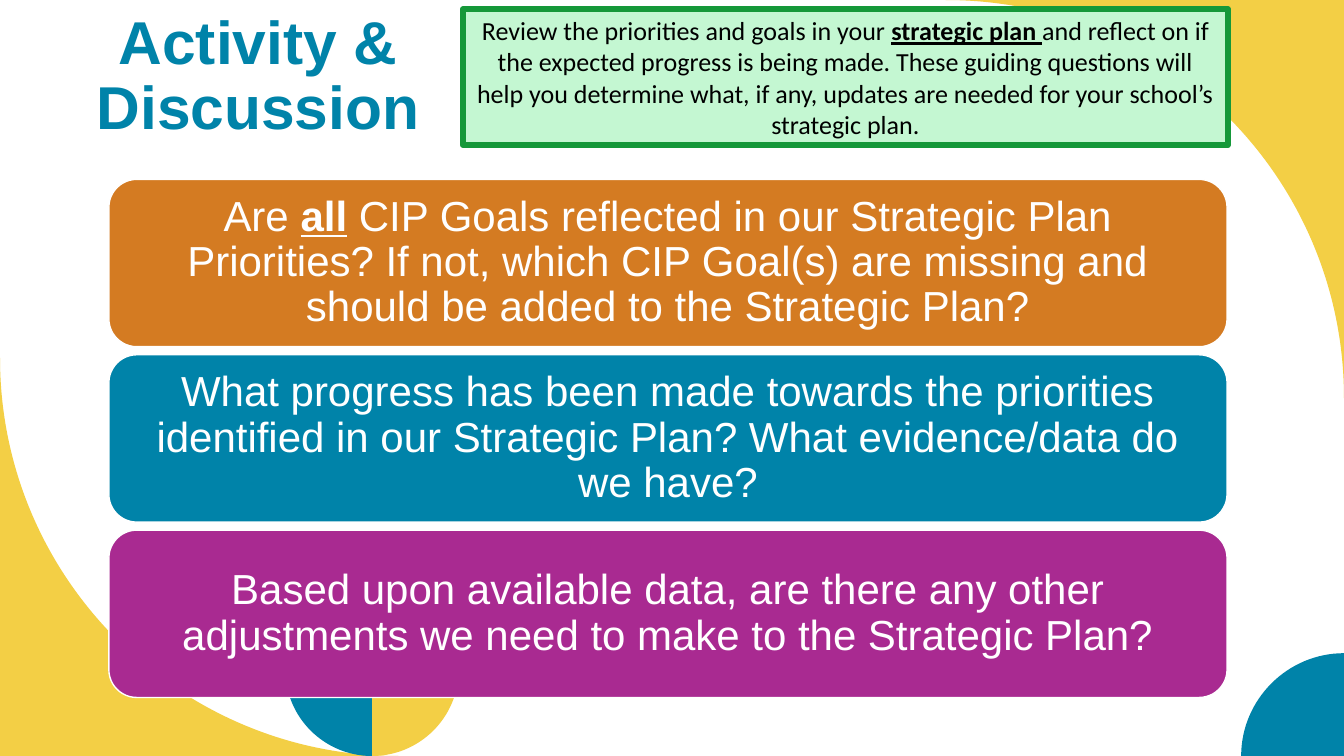
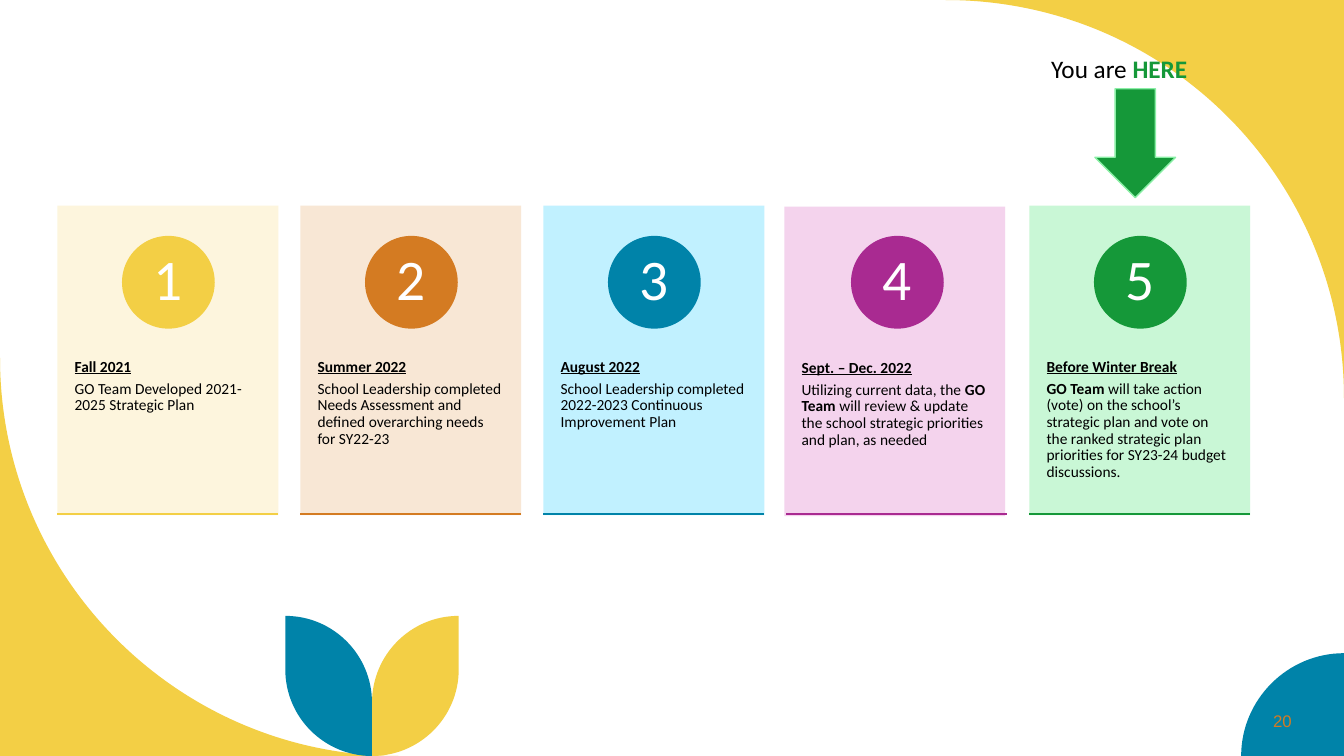
from lxml.etree import SubElement
from pptx import Presentation
from pptx.dml.color import RGBColor
from pptx.enum.shapes import MSO_CONNECTOR, MSO_SHAPE
from pptx.enum.text import MSO_ANCHOR, PP_ALIGN
from pptx.oxml.ns import qn
from pptx.util import Inches, Pt

YELLOW = RGBColor(0xF3, 0xCF, 0x45)
BLUE = RGBColor(0x00, 0x83, 0xA9)
ORANGE = RGBColor(0xD4, 0x7B, 0x22)
PURPLE = RGBColor(0xA9, 0x2A, 0x91)
GREEN = RGBColor(0x15, 0x98, 0x39)
CREAM = RGBColor(0xFD, 0xF5, 0xDA)
PEACH = RGBColor(0xF8, 0xE5, 0xD1)
SKY = RGBColor(0xBB, 0xF0, 0xFF)
PINK = RGBColor(0xF3, 0xCF, 0xEC)
MINT = RGBColor(0xC4, 0xF7, 0xD2)
LIME = RGBColor(0x89, 0xEF, 0xA5)
WHITE = RGBColor(0xFF, 0xFF, 0xFF)
BLACK = RGBColor(0x00, 0x00, 0x00)


def draw(slide, color, start, *legs):
    """Draw a filled outline; a leg is one point (line) or three (Bezier curve)."""
    spots = [(Inches(x), Inches(y)) for leg in legs for x, y in leg]
    pen = slide.shapes.build_freeform(Inches(start[0]), Inches(start[1]))
    pen.add_line_segments(spots, close=True)
    shape = pen.convert_to_shape()
    shape.shadow.inherit = False
    shape.fill.solid()
    shape.fill.fore_color.rgb = color
    shape.line.fill.background()
    lines = iter(list(shape._element.iter(qn("a:lnTo"))))
    for leg in legs:
        first, *rest = [next(lines) for _ in leg]
        if rest:
            first.tag = qn("a:cubicBezTo")
            for line in rest:
                first.append(line[0])
                line.getparent().remove(line)


def write(shape, paras, size, color, font="Calibri", align=PP_ALIGN.CENTER,
          anchor=MSO_ANCHOR.MIDDLE, inset=(0.1, 0.05), spacing=1.0, after=0):
    """Fill a shape with paragraphs of (text, marks[, color]) runs; marks b and u."""
    frame = shape.text_frame
    frame.word_wrap = True
    frame.vertical_anchor = anchor
    frame.margin_left = frame.margin_right = Inches(inset[0])
    frame.margin_top = frame.margin_bottom = Inches(inset[1])
    for index, runs in enumerate(paras):
        para = frame.add_paragraph() if index else frame.paragraphs[0]
        para.alignment = align
        para.line_spacing = spacing
        para.space_after = Pt(after)
        for text, marks, *tint in runs:
            run = para.add_run()
            run.text = text
            run.font.name = font
            run.font.size = Pt(size)
            run.font.bold = "b" in marks
            run.font.underline = "u" in marks
            run.font.color.rgb = tint[0] if tint else color


deck = Presentation()
deck.slide_width = Inches(13.33)
deck.slide_height = Inches(7.5)
talk, steps = [deck.slides.add_slide(deck.slide_layouts[6]) for _ in range(2)]

# Shared background: corner curves and a pair of leaves
for slide in (talk, steps):
    draw(slide, YELLOW, (13.33, 0), [(13.33, 3.95)],
         [(13.33, 1.77), (11.57, 0), (9.38, 0)])
    draw(slide, YELLOW, (0, 3.55),
         [(0, 5.73), (1.77, 7.5), (3.95, 7.5)], [(0, 7.5)])
    draw(slide, BLUE, (13.33, 7.5), [(13.33, 6.48)],
         [(12.77, 6.48), (12.31, 6.94), (12.31, 7.5)])
    stem = 3.69
    for color, side in ((YELLOW, 1), (BLUE, -1)):
        tip = stem + 0.86 * side
        bend = stem + 0.47 * side
        draw(slide, color, (tip, 6.11), [(tip, 6.64)],
             [(tip, 7.12), (bend, 7.5), (stem, 7.5)], [(stem, 6.97)],
             [(stem, 6.5), (stem + 0.38 * side, 6.11), (tip, 6.11)])

# Activity and discussion
brief = talk.shapes.add_shape(
    MSO_SHAPE.RECTANGLE, Inches(4.59), Inches(0.09), Inches(7.59), Inches(1.35))
brief.shadow.inherit = False
brief.fill.solid()
brief.fill.fore_color.rgb = MINT
brief.line.color.rgb = GREEN
brief.line.width = Pt(4)
write(brief, [[
    ("Review the priorities and goals in your ", ""),
    ("strategic plan ", "bu"),
    ("and reflect on if the expected progress is being made. These guiding "
     "questions will help you determine what, if any, updates are needed for "
     "your school’s strategic plan.", ""),
]], 18.6, BLACK)

title = talk.shapes.add_textbox(Inches(0.58), Inches(0.09), Inches(3.96), Inches(1.35))
write(title, [[("Activity & Discussion", "b")]], 43.2, BLUE, "Arial", spacing=0.9)

asks = [
    (ORANGE, [
        ("Are ", ""), ("all", "bu"),
        (" CIP Goals reflected in our Strategic Plan Priorities? If not, which "
         "CIP Goal(s) are missing and should be added to the Strategic Plan?", "")]),
    (BLUE, [
        ("What progress has been made towards the priorities identified in our "
         "Strategic Plan? What evidence/data do we have?", "")]),
    (PURPLE, [
        ("Based upon available data, are there any other adjustments we need to "
         "make to the Strategic Plan?", "")]),
]
for row, (color, runs) in enumerate(asks):
    panel = talk.shapes.add_shape(
        MSO_SHAPE.ROUNDED_RECTANGLE,
        Inches(1.08), Inches(1.78 + 1.74 * row), Inches(11.09), Inches(1.66))
    panel.shadow.inherit = False
    panel.fill.solid()
    panel.fill.fore_color.rgb = color
    panel.line.color.rgb = WHITE
    panel.line.width = Pt(1)
    write(panel, [runs], 30, WHITE, "Arial", inset=(0.12, 0.06), spacing=0.9)

# Timeline of five steps
number = steps.shapes.add_textbox(Inches(11.1), Inches(6.95), Inches(1.81), Inches(0.4))
write(number, [[("20", "")]], 12, ORANGE, "Arial", PP_ALIGN.RIGHT)

# Each card: colours, shift off the grid, date and text
cards = [
    (YELLOW, CREAM, (0, 0), "Fall 2021", [
        ("GO Team Developed 2021-2025 Strategic Plan", "")]),
    (ORANGE, PEACH, (0, 0), "Summer 2022", [
        ("School Leadership completed Needs Assessment and defined overarching "
         "needs for SY22-23", "")]),
    (BLUE, SKY, (0, 0), "August 2022", [
        ("School Leadership completed 2022-2023 Continuous Improvement Plan", "")]),
    (PURPLE, PINK, (-0.02, 0.01), "Sept. – Dec. 2022", [
        ("Utilizing current data, the ", ""), ("GO Team ", "b"),
        ("will review & update the school strategic priorities and plan, as needed", "")]),
    (GREEN, MINT, (0, 0), "Before Winter Break", [
        ("GO Team ", "b"),
        ("will take action (vote) on the school’s strategic plan and vote on the "
         "ranked strategic plan priorities for SY23-24 budget discussions.", "")]),
]
for col, (color, tint, (right, down), date, runs) in enumerate(cards):
    left = 0.57 + 2.41 * col
    card = steps.shapes.add_shape(
        MSO_SHAPE.RECTANGLE, Inches(left + right), Inches(2.04 + down),
        Inches(2.19), Inches(3.07))
    card.shadow.inherit = False
    card.fill.solid()
    card.fill.fore_color.rgb = tint
    shade = card._element.spPr.find(qn("a:solidFill"))[0]
    SubElement(shade, qn("a:alpha")).set("val", "90000")
    card.line.fill.background()
    write(card, [[(date, "bu")], runs], 11, BLACK, align=PP_ALIGN.LEFT,
          anchor=MSO_ANCHOR.TOP, inset=(0.17, 0), spacing=0.9, after=3.85)
    card.text_frame.margin_top = Inches(1.52)

    badge = steps.shapes.add_shape(
        MSO_SHAPE.OVAL, Inches(left + 0.64), Inches(2.34), Inches(0.92), Inches(0.92))
    badge.shadow.inherit = False
    badge.fill.solid()
    badge.fill.fore_color.rgb = color
    badge.line.fill.background()
    write(badge, [[(str(col + 1), "")]], 41, WHITE, inset=(0.07, 0.01), spacing=0.9)

    rule = steps.shapes.add_connector(
        MSO_CONNECTOR.STRAIGHT,
        Inches(left), Inches(5.1), Inches(left + 2.19), Inches(5.1))
    rule.line.color.rgb = color
    rule.line.width = Pt(1)
    SubElement(rule._element.spPr, qn("a:effectLst"))

arrow = steps.shapes.add_shape(
    MSO_SHAPE.DOWN_ARROW, Inches(10.86), Inches(0.88), Inches(0.8), Inches(1.08))
arrow.shadow.inherit = False
arrow.fill.solid()
arrow.fill.fore_color.rgb = GREEN
arrow.line.color.rgb = LIME
arrow.line.width = Pt(1)

label = steps.shapes.add_textbox(Inches(9.69), Inches(0.48), Inches(2.82), Inches(0.4))
write(label, [[("You are ", ""), ("HERE", "b", GREEN)]], 18, BLACK,
      anchor=MSO_ANCHOR.TOP)

deck.save("out.pptx")
